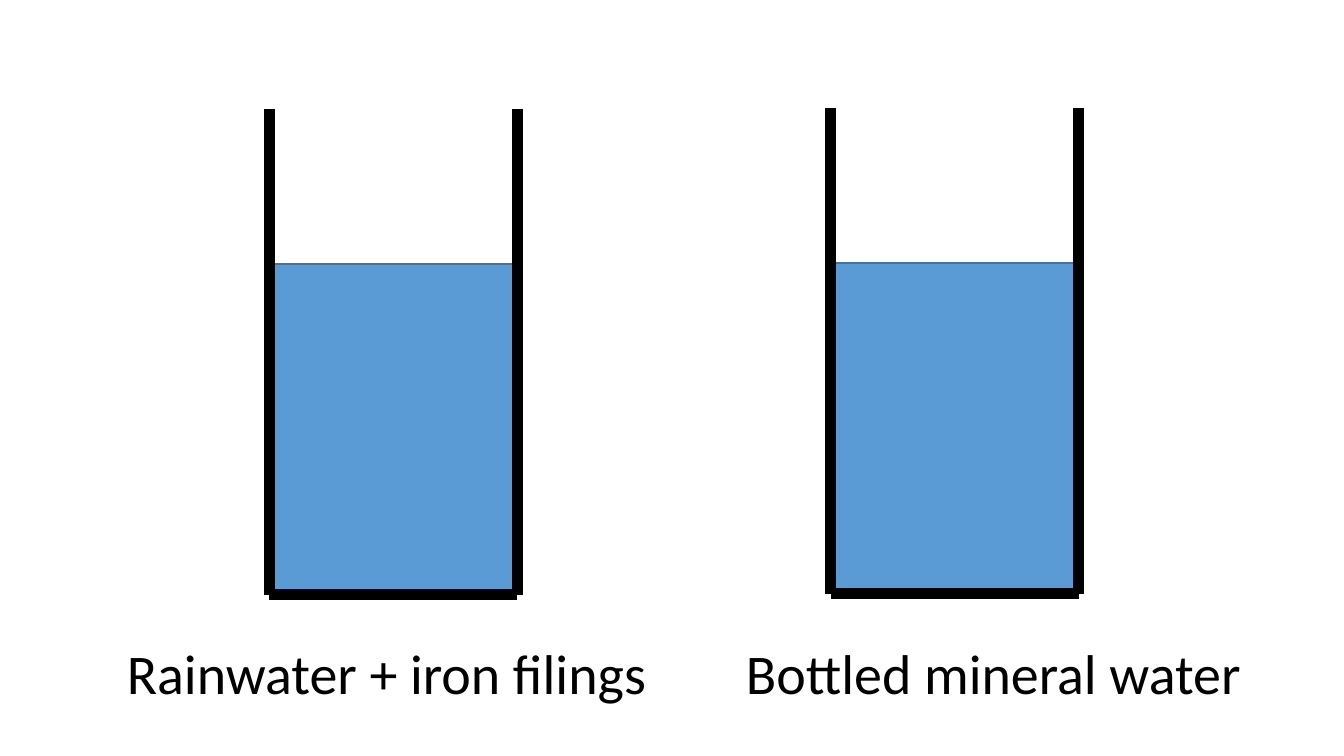
from lxml import etree
from pptx import Presentation
from pptx import util as u
from pptx.dml.color import RGBColor
from pptx.enum import shapes, text
from pptx.oxml import ns

BLACK = RGBColor(0x00, 0x00, 0x00)
WATER_FILL = RGBColor(0x5B, 0x9B, 0xD5)
WATER_EDGE = RGBColor(0x43, 0x73, 0x9E)

# Beaker measures in inches
WIDTH, HEIGHT = 2.46, 4.82
WATER_INSET, WATER_DROP, WATER_HEIGHT = 0.04, 1.54, 3.28
LABEL_TOP, LABEL_WIDTH, LABEL_HEIGHT = 6.29, 5.49, 0.77

# Beaker left, beaker top, label left, label
BEAKERS = [
    (2.67, 1.08, 1.16, "Rainwater + iron filings"),
    (8.24, 1.07, 7.3, "Bottled mineral water"),
]

presentation = Presentation()
presentation.slide_width = u.Inches(13.33)
presentation.slide_height = u.Inches(7.5)
slide = presentation.slides.add_slide(presentation.slide_layouts[6])


def add_wall(*ends):
    wall = slide.shapes.add_connector(
        shapes.MSO_CONNECTOR.STRAIGHT, *[u.Inches(end) for end in ends])
    wall.line.color.rgb = BLACK
    wall.line.width = u.Pt(8)
    etree.SubElement(wall._element.spPr, ns.qn("a:effectLst"))


for left, top, label_left, label in BEAKERS:
    right, bottom = left + WIDTH, top + HEIGHT

    # Water
    water = slide.shapes.add_shape(
        shapes.MSO_SHAPE.RECTANGLE,
        u.Inches(left + WATER_INSET), u.Inches(top + WATER_DROP),
        u.Inches(WIDTH - WATER_INSET), u.Inches(WATER_HEIGHT))
    water.shadow.inherit = False
    water.fill.solid()
    water.fill.fore_color.rgb = WATER_FILL
    water.line.color.rgb = WATER_EDGE
    water.line.width = u.Pt(1)

    # Glass: right side, left side, base
    add_wall(right, top, right, bottom)
    add_wall(left, top, left, bottom)
    add_wall(right, bottom, left, bottom)

    # Label
    box = slide.shapes.add_textbox(
        u.Inches(label_left), u.Inches(LABEL_TOP),
        u.Inches(LABEL_WIDTH), u.Inches(LABEL_HEIGHT))
    frame = box.text_frame
    frame.word_wrap = True
    frame.auto_size = text.MSO_AUTO_SIZE.SHAPE_TO_FIT_TEXT
    paragraph = frame.paragraphs[0]
    paragraph.text = label
    paragraph.font.name = "Calibri"
    paragraph.font.size = u.Pt(40)
    paragraph.font.color.rgb = BLACK

presentation.save("out.pptx")
